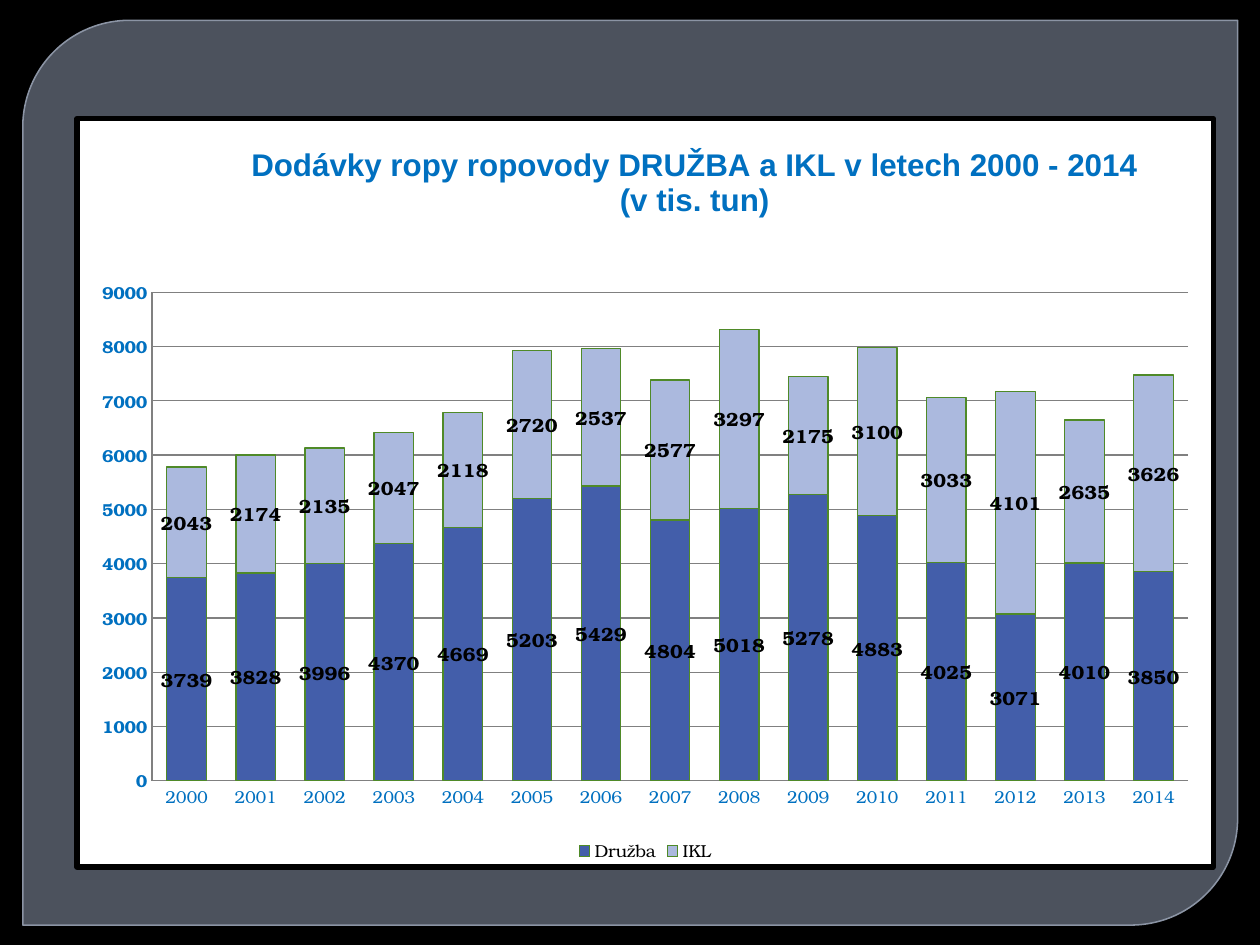
from lxml.etree import SubElement
from pptx import Presentation
from pptx.chart.data import CategoryChartData
from pptx.dml.color import RGBColor
from pptx.enum.chart import XL_CHART_TYPE, XL_LABEL_POSITION, XL_LEGEND_POSITION, XL_TICK_MARK
from pptx.enum.shapes import MSO_SHAPE
from pptx.enum.text import PP_ALIGN
from pptx.oxml import parse_xml
from pptx.oxml.ns import nsdecls, qn
from pptx.util import Cm, Pt

TITLE = ["Dodávky ropy ropovody DRUŽBA a IKL v letech 2000 - 2014", "(v tis. tun)"]
YEARS = [str(year) for year in range(2000, 2015)]
SERIES = [
    ("Družba", "435EAA", [3739, 3828, 3996, 4370, 4669, 5203, 5429, 4804,
                          5018, 5278, 4883, 4025, 3071, 4010, 3850]),
    ("IKL", "ABB9DE", [2043, 2174, 2135, 2047, 2118, 2720, 2537, 2577,
                       3297, 2175, 3100, 3033, 4101, 2635, 3626]),
]
BODY_FONT = "TeX Gyre Bonum"
BLUE, BLACK, GRID, GREEN = "0070C0", "000000", "808080", "4F8A28"
TITLE_AT = {"x": 0.15, "y": 0.03}
PLOT_AT = {"x": 0.066, "y": 0.232, "w": 0.912, "h": 0.653}


def rgb(value):
    return RGBColor.from_string(value)


def set_font(font, size=10, color=BLACK, bold=False, name=BODY_FONT):
    font.size, font.bold, font.name = Pt(size), bold, name
    font.color.rgb = rgb(color)


def add_text(tf, text, first=False, align=PP_ALIGN.CENTER, **fmt):
    p = tf.paragraphs[0] if first else tf.add_paragraph()
    p.alignment = align
    r = p.add_run()
    r.text = text
    set_font(r.font, **fmt)


def set_line(line, color, width):
    line.color.rgb = rgb(color)
    line.width = Pt(width)


def set_alpha(element, percent):
    for color in element.iter(qn("a:srgbClr")):
        SubElement(color, qn("a:alpha"), val=str(percent * 1000))


def manual_layout(sizes, inner=False):
    target = '<c:layoutTarget val="inner"/>' if inner else ""
    modes = "".join(f'<c:{k}Mode val="edge"/>' for k in sizes if k in "xy")
    values = "".join(f'<c:{k} val="{v}"/>' for k, v in sizes.items())
    return parse_xml(f'<c:layout {nsdecls("c")}><c:manualLayout>{target}{modes}{values}'
                     '</c:manualLayout></c:layout>')


def add_panel(s):
    sp = s.shapes.add_shape(MSO_SHAPE.ROUND_2_DIAG_RECTANGLE,
                            Cm(0.46), Cm(0.41), Cm(24.49), Cm(18.24))
    sp.shadow.inherit = False
    sp.adjustments[0], sp.adjustments[1] = 0.118, 0
    sp.fill.solid()
    sp.fill.fore_color.rgb = rgb("767F8F")
    set_alpha(sp.fill._xPr.find(qn("a:solidFill")), 65)
    set_line(sp.line, "8B94A4", 0.87)


def add_title(chart):
    chart.has_title = True
    title = chart.chart_title
    for i, text in enumerate(TITLE):
        add_text(title.text_frame, text, first=i == 0, size=18, color=BLUE,
                 bold=True, name="Arial")
    title.include_in_layout = False
    element = title._element
    for old in element.findall(qn("c:layout")):
        element.remove(old)
    element.find(qn("c:tx")).addnext(manual_layout(TITLE_AT))


def format_axis(axis, bold=False):
    axis.major_tick_mark = axis.minor_tick_mark = XL_TICK_MARK.NONE
    set_font(axis.tick_labels.font, color=BLUE, bold=bold)
    set_line(axis.format.line, GRID, 0.75)


def format_series(series, color):
    series.format.fill.solid()
    series.format.fill.fore_color.rgb = rgb(color)
    set_line(series.format.line, GREEN, 0.75)
    labels = series.data_labels
    labels.show_value = True
    labels.position = XL_LABEL_POSITION.CENTER
    set_font(labels.font, size=11, bold=True)


def format_plot(chart):
    plot = chart.plots[0]
    plot.gap_width, plot.overlap = 75, 100
    plot.vary_by_categories = False
    for series, (_, color, _) in zip(plot.series, SERIES):
        format_series(series, color)
    area = chart._chartSpace.chart.plotArea
    for old in area.findall(qn("c:layout")):
        area.remove(old)
    area.insert(0, manual_layout(PLOT_AT, inner=True))


def add_frame(chart):
    chart._chartSpace.chart.addnext(parse_xml(
        f'<c:spPr {nsdecls("c", "a")}>'
        '<a:solidFill><a:srgbClr val="FFFFFF"/></a:solidFill>'
        f'<a:ln w="{Pt(3)}"><a:solidFill><a:srgbClr val="{BLACK}"/></a:solidFill></a:ln>'
        '</c:spPr>'))


def add_oil_chart(s):
    data = CategoryChartData()
    data.categories = YEARS
    for name, _, values in SERIES:
        data.add_series(name, values)
    chart = s.shapes.add_chart(XL_CHART_TYPE.COLUMN_STACKED, Cm(1.5), Cm(2.34),
                               Cm(23.01), Cm(15.19), data).chart
    set_font(chart.font)
    add_title(chart)
    format_axis(chart.category_axis)
    axis = chart.value_axis
    format_axis(axis, bold=True)
    axis.minimum_scale, axis.maximum_scale, axis.major_unit = 0, 9000, 1000
    axis.has_major_gridlines = True
    set_line(axis.major_gridlines.format.line, GRID, 0.75)
    format_plot(chart)
    chart.has_legend = True
    chart.legend.position = XL_LEGEND_POSITION.BOTTOM
    chart.legend.include_in_layout = False
    set_font(chart.legend.font)
    add_frame(chart)


def main():
    prs = Presentation()
    prs.slide_width, prs.slide_height = Cm(25.4), Cm(19.05)
    s = prs.slides.add_slide(prs.slide_layouts[6])
    s.background.fill.solid()
    s.background.fill.fore_color.rgb = rgb(BLACK)
    add_panel(s)
    add_oil_chart(s)
    prs.save("out.pptx")


if __name__ == "__main__":
    main()
